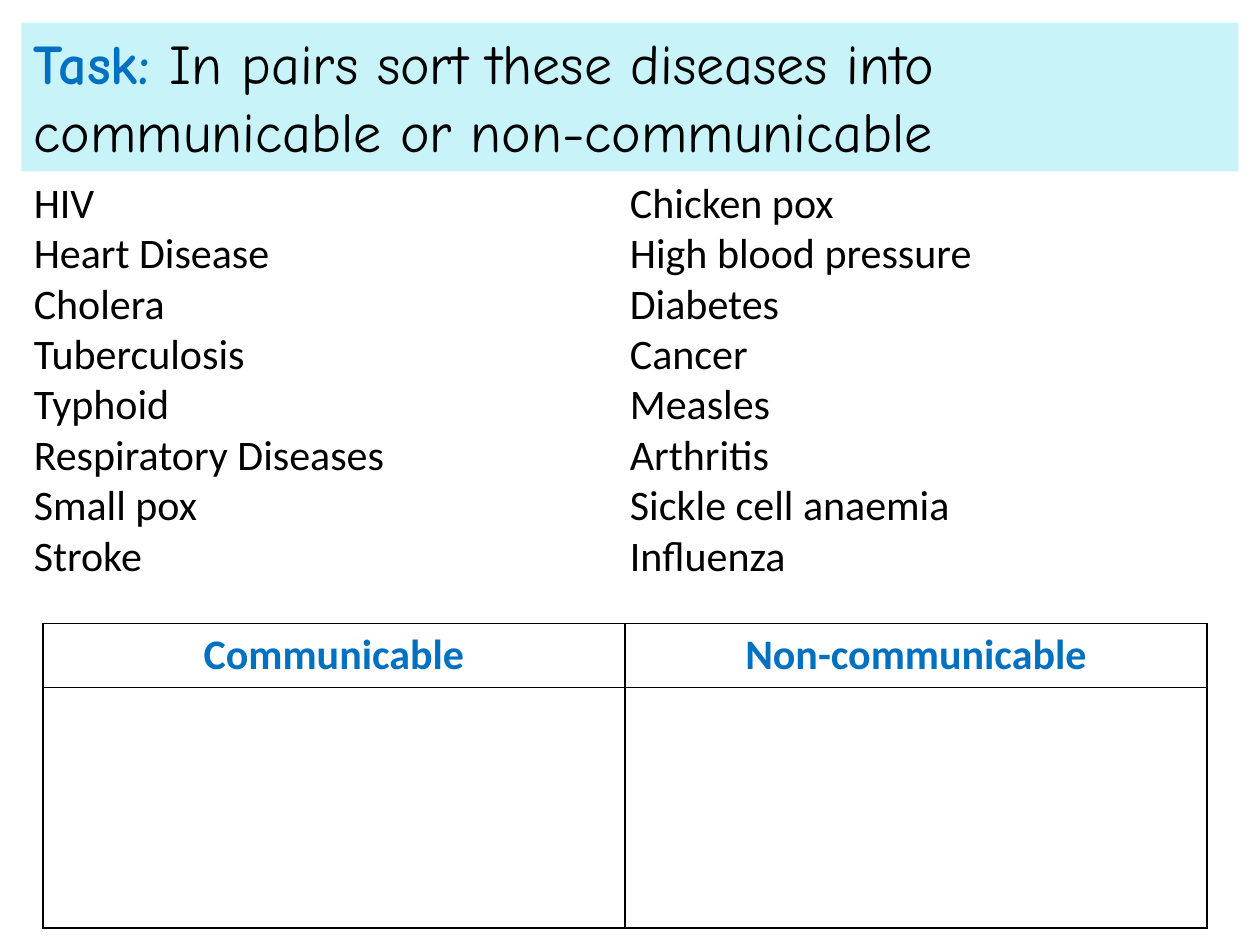
from pptx import Presentation
from pptx import util as u
from pptx.dml.color import RGBColor
from pptx.enum import shapes, text
from pptx.oxml import parse_xml
from pptx.oxml.ns import nsdecls

BLACK = RGBColor(0x00, 0x00, 0x00)
WHITE = RGBColor(0xFF, 0xFF, 0xFF)
BLUE = RGBColor(0x00, 0x70, 0xC0)
PALE_CYAN = RGBColor(0xC8, 0xF3, 0xF8)

TASK_LABEL = {"name": "Comic Neue", "size": u.Pt(32), "bold": True}
TASK_BODY = {"name": "Comic Neue", "size": u.Pt(32), "bold": False}
DISEASE = {"name": "Calibri", "size": u.Pt(24)}
HEADING = {"name": "Calibri", "size": u.Pt(24), "bold": True}

DISEASES = [
    "HIV", "Heart Disease", "Cholera", "Tuberculosis",
    "Typhoid", "Respiratory Diseases", "Small pox", "Stroke",
    "Chicken pox", "High blood pressure", "Diabetes", "Cancer",
    "Measles", "Arthritis", "Sickle cell anaemia", "Influenza",
]
GROUPS = ["Communicable", "Non-communicable"]


def add_run(paragraph, words, style, color):
    run = paragraph.add_run()
    run.text = words
    for attribute, value in style.items():
        setattr(run.font, attribute, value)
    run.font.color.rgb = color


def add_task(slide, left, top, width, height):
    banner = slide.shapes.add_shape(
        shapes.MSO_SHAPE.RECTANGLE, left, top, width, height)
    banner.shadow.inherit = False
    banner.fill.solid()
    banner.fill.fore_color.rgb = PALE_CYAN
    banner.line.fill.background()
    banner.text_frame.word_wrap = True
    banner.text_frame.vertical_anchor = text.MSO_ANCHOR.TOP
    task = banner.text_frame.paragraphs[0]
    task.alignment = text.PP_ALIGN.LEFT
    add_run(task, "Task: ", TASK_LABEL, BLUE)
    add_run(task, "In pairs sort these diseases into communicable or "
            "non-communicable", TASK_BODY, BLACK)


def add_diseases(slide, left, top, width, height):
    frame = slide.shapes.add_textbox(left, top, width, height).text_frame
    frame.word_wrap = True
    frame._txBody.bodyPr.set("numCol", "2")
    for index, disease in enumerate(DISEASES):
        line = frame.add_paragraph() if index else frame.paragraphs[0]
        add_run(line, disease, DISEASE, BLACK)


def outline_cell(cell):
    properties = cell._tc.get_or_add_tcPr()
    for side in ("lnL", "lnR", "lnT", "lnB"):
        properties.append(parse_xml(
            f'<a:{side} {nsdecls("a")} w="{u.Pt(1)}"><a:solidFill>'
            f'<a:srgbClr val="{BLACK}"/></a:solidFill></a:{side}>'))


def add_sorting_table(slide, left, top, width, height):
    table = slide.shapes.add_table(
        2, len(GROUPS), left, top, width, height).table
    table.first_row = table.horz_banding = False
    table.rows[0].height = u.Inches(0.5)
    table.rows[1].height = height - table.rows[0].height
    for cell in table.iter_cells():
        outline_cell(cell)
        cell.fill.solid()
        cell.fill.fore_color.rgb = WHITE
    for column, group in enumerate(GROUPS):
        heading = table.cell(0, column).text_frame.paragraphs[0]
        heading.alignment = text.PP_ALIGN.CENTER
        add_run(heading, group, HEADING, BLUE)


def main():
    deck = Presentation()
    deck.slide_width, deck.slide_height = u.Inches(10), u.Inches(7.5)
    slide = deck.slides.add_slide(deck.slide_layouts[6])
    regions = [
        (add_sorting_table, (0.34, 4.95, 9.24, 2.41)),
        (add_task, (0.17, 0.18, 9.66, 1.18)),
        (add_diseases, (0.17, 1.35, 9.66, 3.5)),
    ]
    for add_region, box in regions:
        add_region(slide, *map(u.Inches, box))
    deck.save("out.pptx")


if __name__ == "__main__":
    main()
